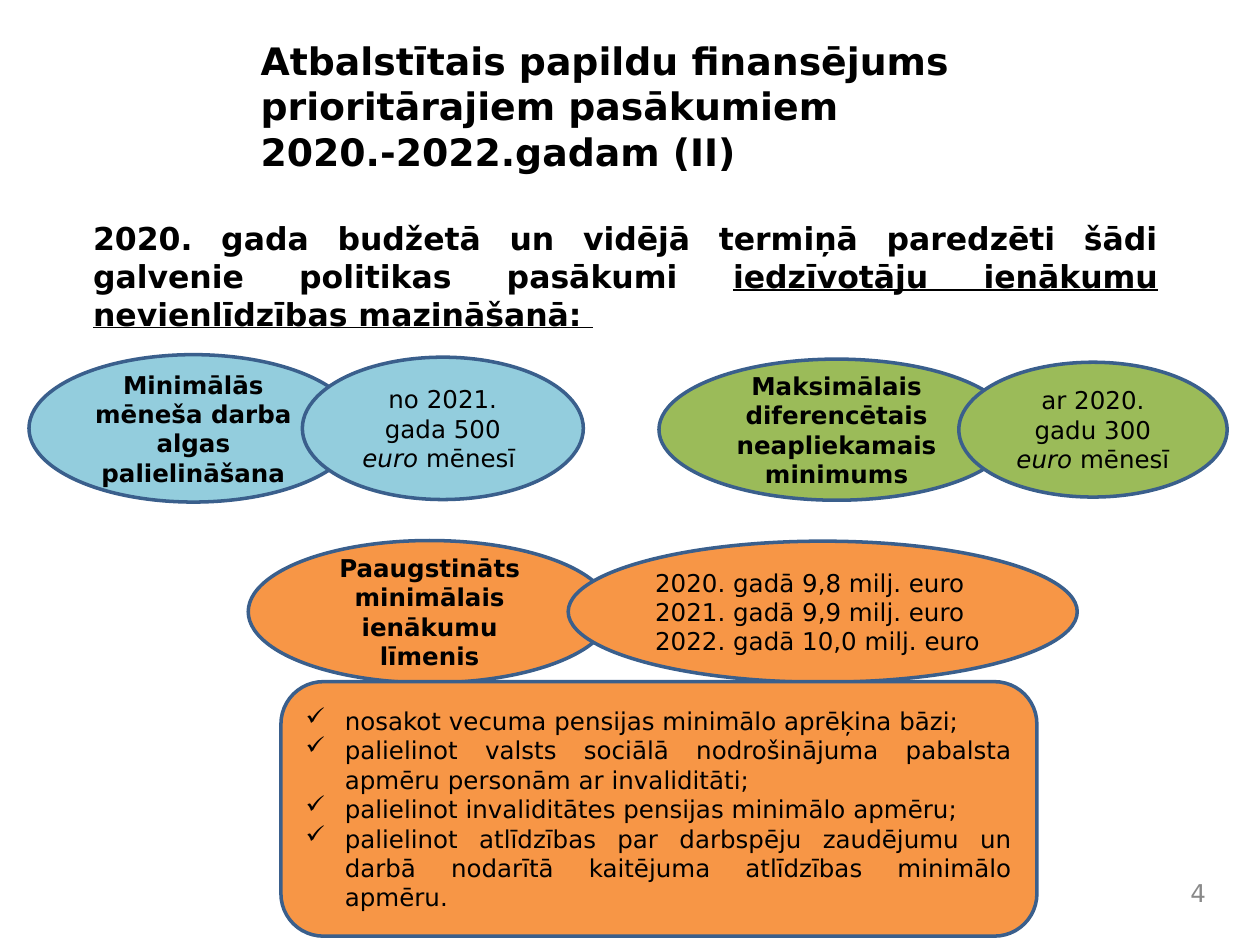
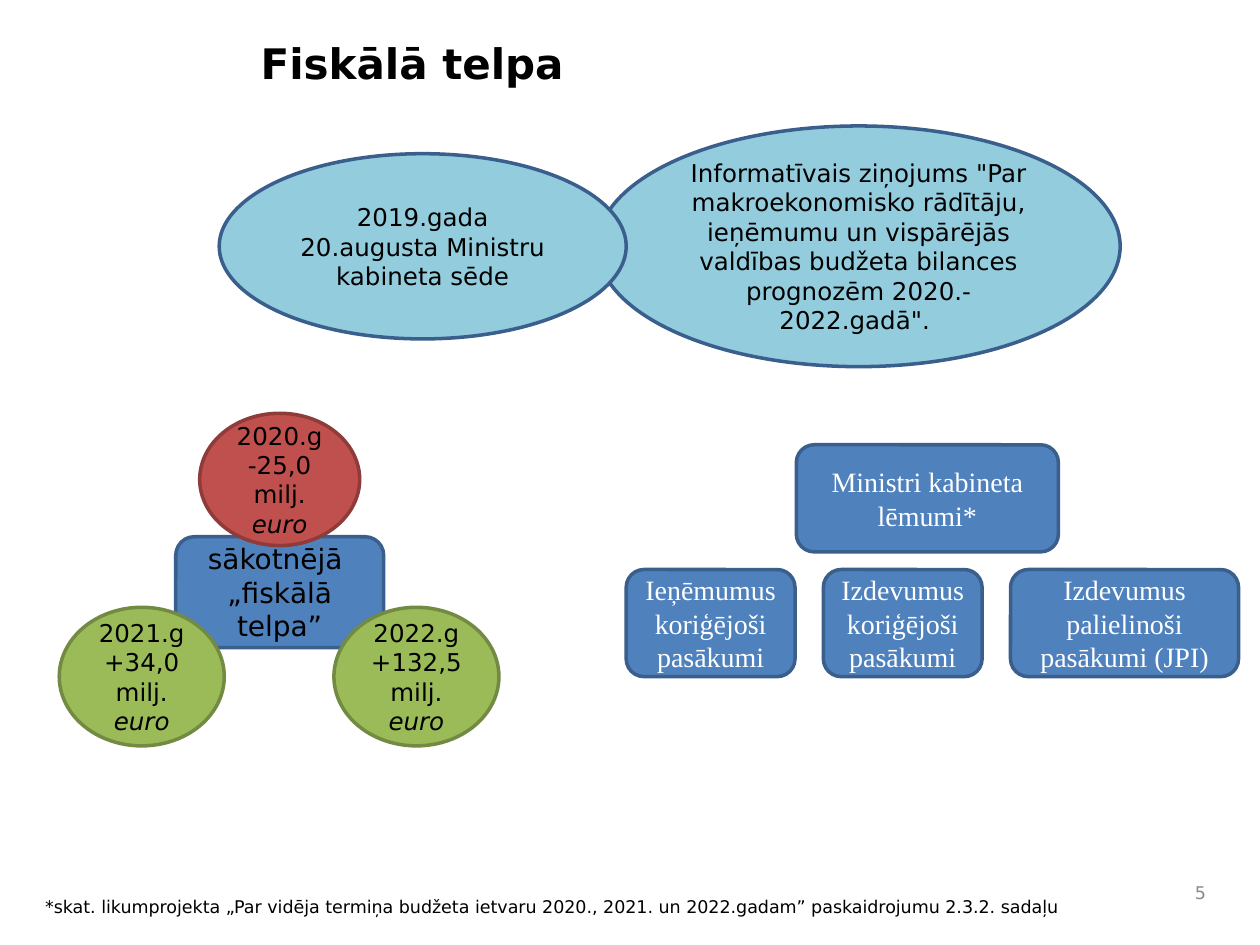
from lxml.etree import SubElement
from pptx import Presentation
from pptx.dml.color import RGBColor
from pptx.enum.shapes import MSO_SHAPE as SHAPE
from pptx.enum.text import MSO_ANCHOR as ANCHOR, PP_ALIGN as ALIGN
from pptx.oxml.ns import qn
from pptx.util import Inches, Pt

COLS, ROWS = 100, 75
WIDTH, HEIGHT = Inches(10), Inches(7.5)
SANS, SERIF = "DejaVu Sans", "Times New Roman"
COLORS = {
    "black": "000000", "white": "FFFFFF", "grey": "898989",
    "sky": "93CDDD", "blue": "4F81BD", "navy": "3A5F8C",
    "green": "9BBB59", "olive": "738A42", "orange": "F79646",
    "red": "C0504D", "maroon": "8E3B39",
}


def rgb(name):
    return RGBColor.from_string(COLORS[name])


def place(box):
    """Turn a box in grid columns and rows into slide lengths."""
    x, y, w, h = box
    return (int(x * WIDTH / COLS), int(y * HEIGHT / ROWS),
            int(w * WIDTH / COLS), int(h * HEIGHT / ROWS))


def add_bullet(p, char):
    pPr = p._p.get_or_add_pPr()
    pPr.set("marL", str(Inches(0.31)))
    pPr.set("indent", str(-Inches(0.31)))
    SubElement(pPr, qn("a:buChar")).set("char", char)


def write(tf, paragraphs, size, color="black", font=SANS, align=ALIGN.LEFT,
          anchor=ANCHOR.MIDDLE, bullet=None):
    """Each paragraph is a list of (text, style) runs; style holds b, i, u."""
    tf.word_wrap = True
    tf.vertical_anchor = anchor
    for i, runs in enumerate(paragraphs):
        p = tf.add_paragraph() if i else tf.paragraphs[0]
        p.alignment = align
        if bullet:
            add_bullet(p, bullet)
        for text, style in runs:
            if text == "\n":
                p.add_line_break()
                continue
            r = p.add_run()
            r.text = text
            r.font.name, r.font.size = font, Pt(size)
            r.font.color.rgb = rgb(color)
            r.font.bold, r.font.italic = "b" in style, "i" in style
            r.font.underline = "u" in style


def plain(*lines, style=""):
    return [[(line, style)] for line in lines]


def add_text(s, box, paragraphs, size, **kw):
    write(s.shapes.add_textbox(*place(box)).text_frame, paragraphs, size, **kw)


def add_block(s, kind, box, fill, paragraphs, size=14, line="navy",
              align=ALIGN.CENTER, **kw):
    sp = s.shapes.add_shape(kind, *place(box))
    sp.shadow.inherit = False
    sp.fill.solid()
    sp.fill.fore_color.rgb = rgb(fill)
    sp.line.color.rgb = rgb(line)
    sp.line.width = Pt(2)
    write(sp.text_frame, paragraphs, size, align=align, **kw)


# Title and page number shared by both slides
def add_frame(prs, title, title_size, number, number_size):
    s = prs.slides.add_slide(prs.slide_layouts[6])
    add_text(s, (19.7, 2.5, 73.2, 10.6), [title], title_size, anchor=ANCHOR.TOP)
    add_text(s, (92, 69.2, 4.7, 3.3), plain(number), number_size,
             color="grey", align=ALIGN.RIGHT)
    return s


# Two overlapping ellipses at the ends of a box, centred on its height
def add_pair(s, box, fill, left, right, left_in_front=False,
             right_align=ALIGN.CENTER):
    x, y, w, h = box
    (lw, lh, left_text), (rw, rh, right_text) = left, right
    ellipses = [
        ((x, y + (h - lh) / 2, lw, lh), left_text, ALIGN.CENTER),
        ((x + w - rw, y + (h - rh) / 2, rw, rh), right_text, right_align),
    ]
    for part, text, align in ellipses[::-1] if left_in_front else ellipses:
        add_block(s, SHAPE.OVAL, part, fill, text, align=align)


# Central block with one circle on top and two at the lower corners
def add_fiscal_space(s, box):
    x, y, w, h = box
    mid = x + w / 2
    add_block(s, SHAPE.ROUNDED_RECTANGLE, (mid - 8.2, y + 9.8, 16.5, 8.8), "blue",
              plain("sākotnējā ", "„fiskālā telpa”"), size=16)
    cw, ch = 13.1, 11
    years = [
        ((x, y + h - ch, cw, ch), "green", "olive",
         [[("2021.g +34,0 milj. ", ""), ("euro", "i")]]),
        ((mid - 6.3, y, 12.7, 10.5), "red", "maroon",
         [[("2020.g ", "")], [("-25,0 milj. ", ""), ("euro", "i")]]),
        ((x + w - cw, y + h - ch, cw, ch), "green", "olive",
         [[("2022.g", "")], [("+132,5 milj. ", ""), ("euro", "i")]]),
    ]
    for part, fill, line, text in years:
        add_block(s, SHAPE.OVAL, part, fill, text, line=line)


# Heading block above a row of equally spaced blocks
def add_decisions(s, box):
    x, y, w, h = box
    block_h = 8.5
    measures = [(13.4, "Ieņēmumus koriģējoši pasākumi"),
                (12.6, "Izdevumus koriģējoši pasākumi"),
                (18.1, "Izdevumus palielinoši pasākumi (JPI)")]
    gap = (w - sum(mw for mw, _ in measures)) / (len(measures) - 1)
    blocks = [((x + 13.5, y, 20.8, block_h), "Ministri kabineta lēmumi*")]
    left = x
    for mw, text in measures:
        blocks.append(((left, y + h - block_h, mw, block_h), text))
        left += mw + gap
    for part, text in blocks:
        add_block(s, SHAPE.ROUNDED_RECTANGLE, part, "blue", plain(text), size=16,
                  color="white", font=SERIF)


def build_funding(prs):
    title = [("Atbalstītais papildu finansējums prioritārajiem pasākumiem ", "b"),
             ("\n", ""), ("2020.-2022.gadam (II)", "b")]
    s = add_frame(prs, title, 21.6, "4", 14)

    # Introduction
    add_text(s, (6.4, 16.9, 86.5, 12.5), [[
        ("2020. gada budžetā un vidējā termiņā paredzēti šādi galvenie "
         "politikas pasākumi ", "b"),
        ("iedzīvotāju ienākumu nevienlīdzības mazināšanā: ", "bu"),
    ]], 18, align=ALIGN.JUSTIFY, anchor=ANCHOR.TOP)

    # Measures
    add_pair(
        s, (2.3, 28.2, 44, 11.6), "sky",
        (26.1, 11.7, plain("Minimālās mēneša darba algas palielināšana", style="b")),
        (22.3, 11.3, [[("no 2021. gada 500 ", ""), ("euro ", "i"), ("mēnesī ", "")]]))
    add_pair(
        s, (52.3, 28.5, 45.1, 11.2), "green",
        (28.2, 11.2, plain("Maksimālais diferencētais neapliekamais minimums",
                           style="b")),
        (21.3, 10.7, [[("ar 2020. gadu 300 ", ""), ("euro ", "i"), ("mēnesī", "")]]))
    add_pair(
        s, (19.7, 42.9, 65.8, 11.3), "orange",
        (28.8, 11.3, plain("Paaugstināts minimālais ienākumu līmenis", style="b")),
        (40.4, 11.2, plain("2020. gadā 9,8 milj. euro", "2021. gadā 9,9 milj. euro",
                           "2022. gadā 10,0 milj. euro")),
        right_align=ALIGN.LEFT)

    # Checklist
    add_block(s, SHAPE.ROUNDED_RECTANGLE, (22.3, 54.1, 60, 20.2), "orange", plain(
        "nosakot vecuma pensijas minimālo aprēķina bāzi;",
        "palielinot valsts sociālā nodrošinājuma pabalsta apmēru personām ar "
        "invaliditāti;",
        "palielinot invaliditātes pensijas minimālo apmēru;",
        "palielinot atlīdzības par darbspēju zaudējumu un darbā nodarītā "
        "kaitējuma atlīdzības minimālo apmēru.",
    ), align=ALIGN.JUSTIFY, bullet="✓")


def build_fiscal(prs):
    s = add_frame(prs, [("Fiskālā telpa", "b")], 24, "5", 10)

    # Meeting and report
    add_pair(
        s, (17.4, 10, 71.5, 19.1), "sky",
        (32.3, 14.7, plain("2019.gada 20.augusta Ministru kabineta sēde")),
        (41.5, 19.1, plain(
            'Informatīvais ziņojums "Par makroekonomisko rādītāju, ieņēmumu un '
            'vispārējās valdības budžeta bilances prognozēm 2020.-2022.gadā". ')),
        left_in_front=True)

    # Diagrams
    add_fiscal_space(s, (4.7, 32.8, 34.9, 26.4))
    add_decisions(s, (49.7, 35.3, 48.6, 18.4))

    # Footnote
    add_text(s, (2.6, 70.6, 94.1, 2.7), plain(
        "*skat. likumprojekta „Par vidēja termiņa budžeta ietvaru 2020., 2021. un "
        "2022.gadam” paskaidrojumu 2.3.2. sadaļu"), 10, anchor=ANCHOR.TOP)


def main():
    prs = Presentation()
    prs.slide_width, prs.slide_height = WIDTH, HEIGHT
    build_funding(prs)
    build_fiscal(prs)
    prs.save("out.pptx")


if __name__ == "__main__":
    main()
